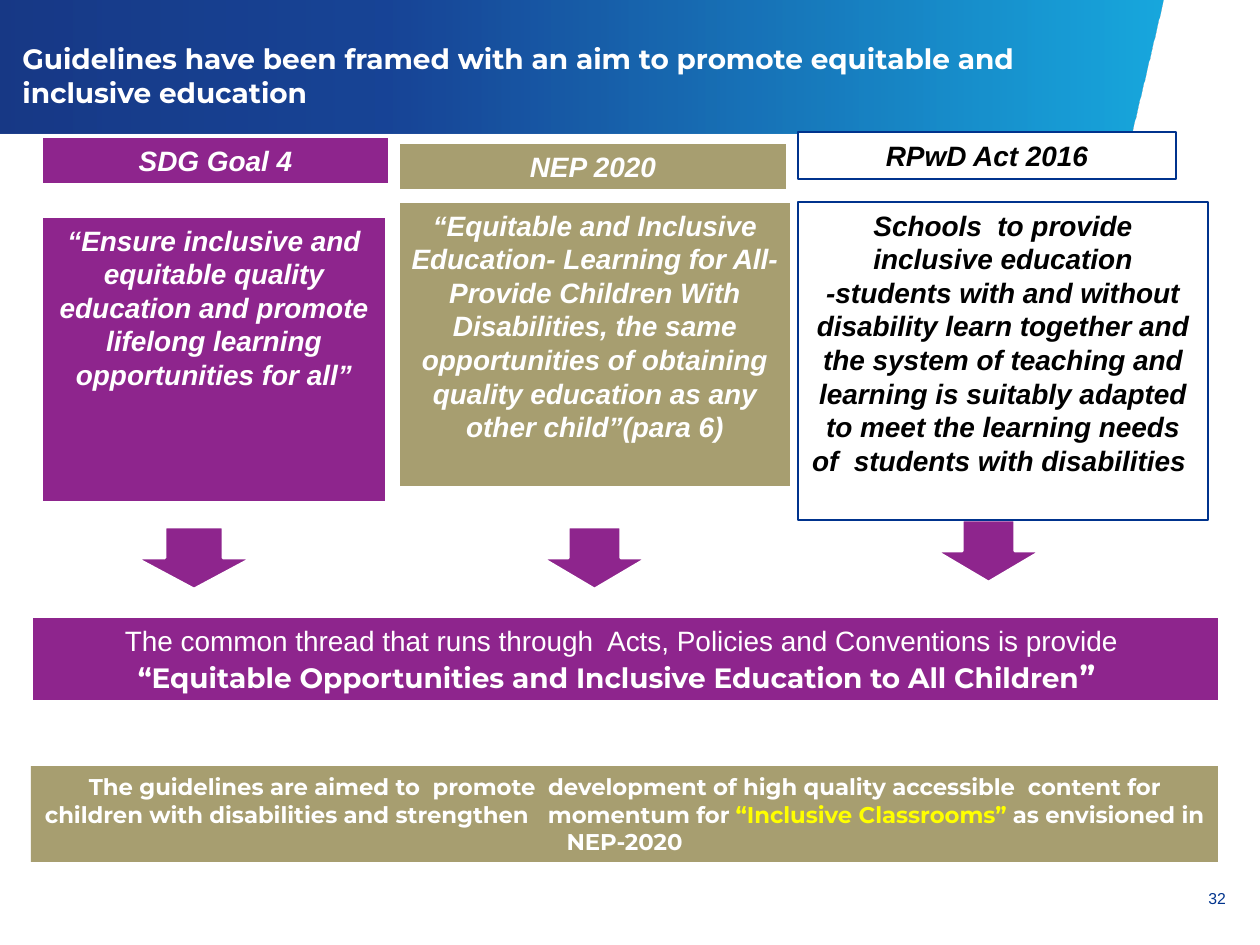
import pptx
import pptx.util
import pptx.dml.color
import pptx.enum.shapes
import pptx.enum.text
import pptx.oxml
import pptx.oxml.ns

PX = 914400 / 126
COLORS = {
    "purple": "8E258D", "olive": "A79E70", "white": "FFFFFF", "black": "000000",
    "navy": "00338D", "deep": "00257A", "sky": "009FDA", "yellow": "FFFF00",
}
SHAPES = pptx.enum.shapes.MSO_SHAPE
ALIGN = pptx.enum.text.PP_ALIGN
ANCHOR = pptx.enum.text.MSO_ANCHOR


def emu(*lengths):
    return [round(length * PX) for length in lengths]


def rgb(name):
    return pptx.dml.color.RGBColor.from_string(COLORS[name])


def write(paragraph, text, size=16, font="Arial", color="white", bold=False,
          italic=False, align=ALIGN.CENTER):
    paragraph.alignment = align
    run = paragraph.add_run()
    run.text = text
    run.font.size = pptx.util.Pt(size)
    run.font.name = font
    run.font.color.rgb = rgb(color)
    run.font.bold = bold
    run.font.italic = italic


def add_block(slide, box, fill, line="white", width=1.5, kind=SHAPES.RECTANGLE,
              anchor=ANCHOR.TOP):
    block = slide.shapes.add_shape(kind, *emu(*box))
    block.shadow.inherit = False
    block.fill.solid()
    block.fill.fore_color.rgb = rgb(fill)
    if line:
        block.line.color.rgb = rgb(line)
        block.line.width = pptx.util.Pt(width)
    else:
        block.line.fill.background()
    block.text_frame.word_wrap = True
    block.text_frame.vertical_anchor = anchor
    return block.text_frame


def add_label(slide, box, anchor=ANCHOR.TOP):
    frame = slide.shapes.add_textbox(*emu(*box)).text_frame
    frame.word_wrap = True
    frame.vertical_anchor = anchor
    return frame


def add_header(slide, box, title):
    left, top, width, height = box
    outline = slide.shapes.build_freeform(left + width, top, scale=PX)
    outline.add_line_segments([
        (left, top), (left, top + height), (left + width - 32, top + height)])
    banner = outline.convert_to_shape()
    banner.shadow.inherit = False
    banner.line.fill.background()
    banner.fill.gradient()
    banner.fill.gradient_angle = 0
    stops = banner.fill._fill._gradFill.find(pptx.oxml.ns.qn("a:gsLst"))
    for stop in list(stops):
        stops.remove(stop)
    for percent, name in ((0, "deep"), (35, "navy"), (100, "sky")):
        stops.append(pptx.oxml.parse_xml(
            f'<a:gs {pptx.oxml.ns.nsdecls("a")} pos="{percent * 1000}">'
            f'<a:srgbClr val="{COLORS[name]}"><a:alpha val="90000"/></a:srgbClr></a:gs>'))
    heading = add_label(slide, (left + 10, top + 35, width - 50, 81), ANCHOR.MIDDLE)
    write(heading.paragraphs[0], title, font="Montserrat", bold=True, align=ALIGN.LEFT)


def add_policy(slide, box, name, quote, name_width, quote_top, arrow, fill,
               line="white", width=1.5, color="white"):
    left, top, quote_width, height = box
    arrow_left, arrow_top, arrow_width = arrow
    add_block(slide, (left + arrow_left, top + arrow_top, arrow_width, 62), "purple",
              kind=SHAPES.DOWN_ARROW)
    parts = (
        (quote, (left, top + quote_top, quote_width, height - quote_top)),
        (name, (left, top, name_width, 47)),
    )
    for text, place in parts:
        frame = add_block(slide, place, fill, line, width)
        write(frame.paragraphs[0], text, color=color, bold=True, italic=True)


def add_common_thread(slide, box):
    frame = add_block(slide, box, "purple")
    write(frame.paragraphs[0],
          "The common thread that runs through  Acts, Policies and Conventions is provide ")
    promise = frame.add_paragraph()
    write(promise, "“Equitable Opportunities and Inclusive Education to All Children",
          font="Montserrat", bold=True)
    write(promise, "”  ", size=18, font="Montserrat", bold=True)


def add_aim(slide, box):
    aim = add_block(slide, box, "olive", line=None, anchor=ANCHOR.MIDDLE).paragraphs[0]
    for text, color in (
        ("The guidelines are aimed to  promote  development of high quality accessible  "
         "content for children with disabilities and strengthen   momentum for ", "white"),
        ("“Inclusive Classrooms” ", "yellow"),
        ("as envisioned in NEP-2020", "white"),
    ):
        write(aim, text, size=13, font="Montserrat", color=color, bold=True)


def add_page_number(slide, box, number):
    frame = add_label(slide, box)
    frame.margin_left = frame.margin_top = emu(10)[0]
    frame.margin_right = frame.margin_bottom = 0
    write(frame.paragraphs[0], number, size=9, color="navy", align=ALIGN.RIGHT)


def main():
    deck = pptx.Presentation()
    deck.slide_width, deck.slide_height = emu(1260, 945)
    slide = deck.slides.add_slide(deck.slide_layouts[6])
    add_header(slide, (0, 0, 1163, 134),
               "Guidelines have been framed with an aim to promote equitable and "
               "inclusive education")
    add_policy(slide, (42, 137, 344, 365), "SDG Goal 4",
               "“Ensure inclusive and equitable quality education and promote lifelong "
               "learning opportunities for all”",
               name_width=347, quote_top=80, arrow=(94, 390, 116), fill="purple")
    add_policy(slide, (399, 143, 392, 344), "NEP 2020",
               "“Equitable and Inclusive Education- Learning for All- Provide Children "
               "With Disabilities, the same opportunities of obtaining quality education "
               "as any other child”(para 6)",
               name_width=388, quote_top=59, arrow=(143, 384, 105), fill="olive")
    add_policy(slide, (798, 132, 410, 388), "RPwD Act 2016",
               "Schools  to provide inclusive education -students with and without "
               "disability learn together and the system of teaching and learning is "
               "suitably adapted to meet the learning needs of  students with disabilities ",
               name_width=378, quote_top=70, arrow=(138, 388, 105), fill="white",
               line="navy", width=0.75, color="black")
    add_common_thread(slide, (32, 617, 1187, 84))
    add_aim(slide, (31, 766, 1187, 96))
    add_page_number(slide, (1162, 879, 64, 39), "32")
    deck.save("out.pptx")


if __name__ == "__main__":
    main()
